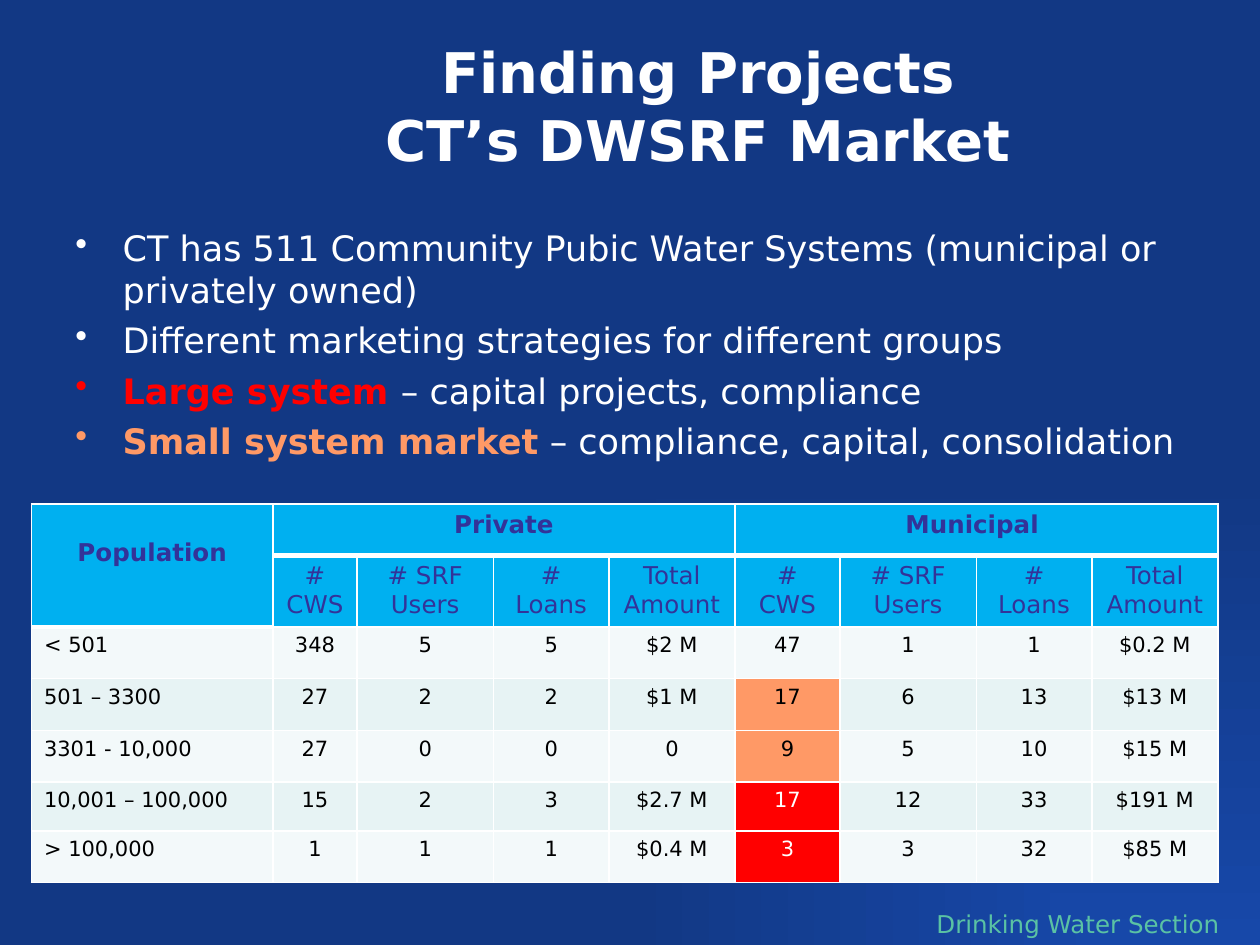
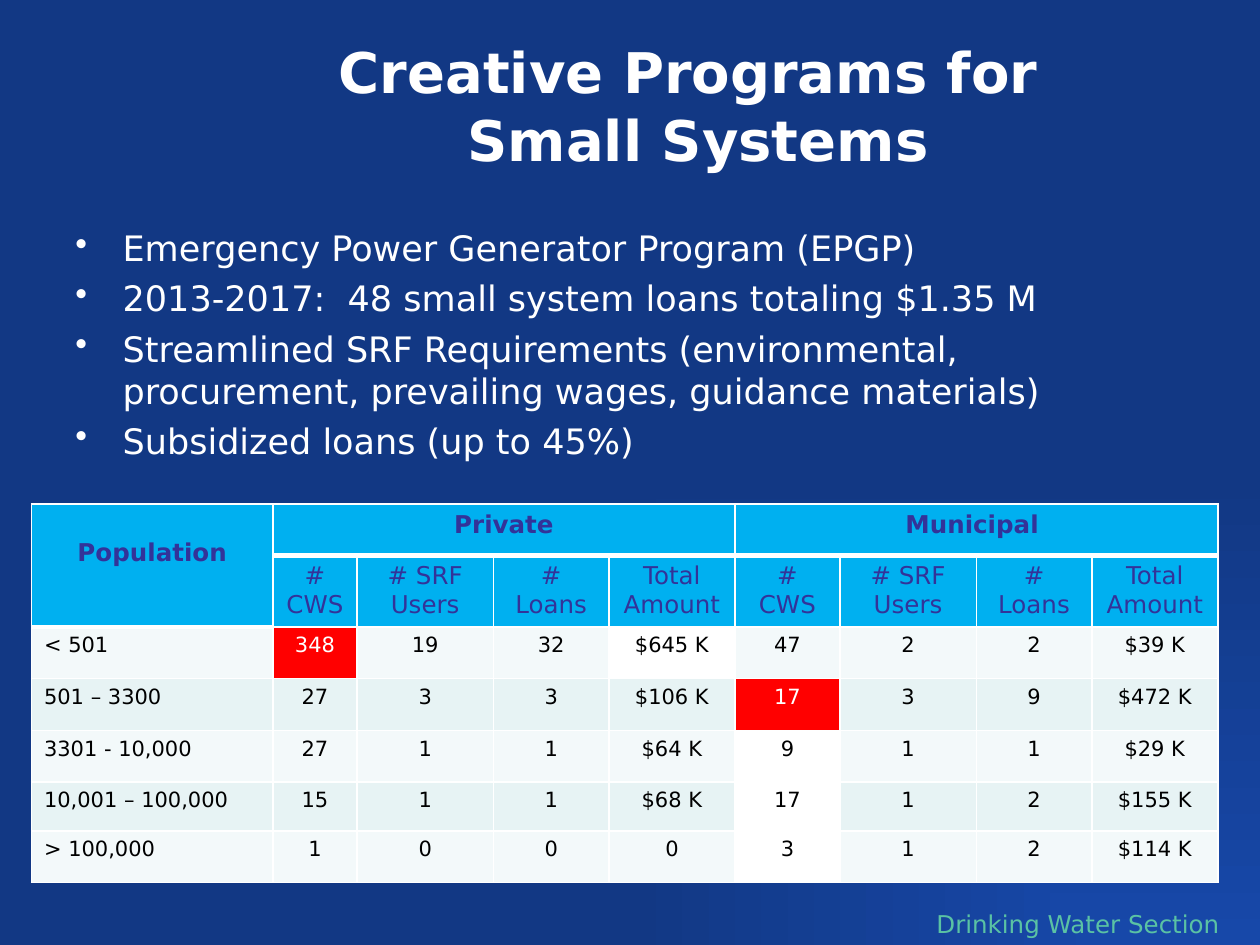
from pptx import Presentation
from pptx.dml.color import RGBColor
from pptx.enum import text
from pptx.oxml import ns
from pptx.util import Pt
from lxml import etree

FONT = "DejaVu Sans"
WHITE = RGBColor(0xFF, 0xFF, 0xFF)
BLACK = RGBColor(0x00, 0x00, 0x00)
RED = RGBColor(0xFF, 0x00, 0x00)
ORANGE = RGBColor(0xFF, 0x99, 0x66)
GREEN = RGBColor(0x5A, 0xC2, 0xA4)
INDIGO = RGBColor(0x33, 0x33, 0x99)
HEADER_BLUE = RGBColor(0x00, 0xB0, 0xF0)
BACK_LIGHT = RGBColor(0x17, 0x48, 0xA9)
BACK_DARK = RGBColor(0x12, 0x38, 0x84)
BANDS = (RGBColor(0xF3, 0xF9, 0xFA), RGBColor(0xE7, 0xF3, 0xF4))

# Boxes: left, top, width, height in points
PAGE_SIZE = (720, 540)
TITLE_BOX = (90, 18, 618, 84)
BODY_BOX = (36, 126, 648, 356)
TABLE_BOX = (18, 288, 678, 205)
FOOTER_BOX = (528, 516, 204, 24)

TITLE_STYLE = {"size": Pt(32), "bold": True, "color": WHITE}
BODY_STYLE = {"size": Pt(20), "bold": False, "color": WHITE}
FOOTER_STYLE = {"size": Pt(14), "bold": False, "color": GREEN}
GROUP_STYLE = {"size": Pt(14), "bold": True, "color": INDIGO}
COLUMN_STYLE = {"size": Pt(14), "bold": False, "color": INDIGO}
DATA_STYLE = {"size": Pt(12), "bold": False, "color": BLACK}

COLUMN_WIDTHS = (138, 48, 78, 66, 72, 60, 78, 66, 72)
ROW_HEIGHTS = (29.5, 29.5, 29.5, 29.5, 29.5, 28, 29.5)
GROUPS = {0: "Population", 1: "Private", 5: "Municipal "}
COLUMN_NAMES = ("#\nCWS", "# SRF Users", "#\nLoans", "Total\nAmount",
                "#\nCWS", "# SRF Users", "#\nLoans", "Total Amount")
POPULATIONS = ("< 501", "501 – 3300", "3301 - 10,000",
               "10,001 – 100,000", "> 100,000")

# Each bullet is a list of (words, style changes)
MARKET = {
    "title": "Finding Projects\vCT’s DWSRF Market",
    "bullets": [
        [("CT has 511 Community Pubic Water Systems "
          "(municipal or privately owned)", {})],
        [("Different marketing strategies for different groups", {})],
        [("Large system ", {"bold": True, "color": RED}),
         ("– capital projects, compliance", {})],
        [("Small system market", {"bold": True, "color": ORANGE}),
         (" – compliance, capital, consolidation", {})],
    ],
    "figures": [
        ("348", "5", "5", "$2 M", "47", "1", "1", "$0.2 M"),
        ("27", "2", "2", "$1 M", "17", "6", "13", "$13 M"),
        ("27", "0", "0", "0", "9", "5", "10", "$15 M"),
        ("15", "2", "3", "$2.7 M", "17", "12", "33", "$191 M"),
        ("1", "1", "1", "$0.4 M", "3", "3", "32", "$85 M"),
    ],
    "highlights": {(3, 5): ORANGE, (4, 5): ORANGE, (5, 5): RED, (6, 5): RED},
}
PROGRAMS = {
    "title": "Creative Programs for \vSmall Systems",
    "bullets": [
        [("Emergency Power Generator Program (EPGP)", {})],
        [("2013-2017:  48 small system loans totaling $1.35 M", {})],
        [("Streamlined SRF Requirements (environmental, procurement, "
          "prevailing wages, guidance materials)", {})],
        [("Subsidized loans (up to 45%)", {})],
    ],
    "figures": [
        ("348", "19", "32", "$645 K", "47", "2", "2", "$39 K"),
        ("27", "3", "3", "$106 K", "17", "3", "9", "$472 K"),
        ("27", "1", "1", "$64 K", "9", "1", "1", "$29 K"),
        ("15", "1", "1", "$68 K", "17", "1", "2", "$155 K"),
        ("1", "0", "0", "0", "3", "1", "2", "$114 K"),
    ],
    "highlights": {(2, 1): RED, (2, 4): WHITE, (3, 5): RED,
                   (4, 5): WHITE, (5, 5): WHITE, (6, 5): WHITE},
}


def add_xml(parent, tag, **attributes):
    return etree.SubElement(parent, ns.qn(tag), attributes)


def style_font(font, style):
    font.name = FONT
    for name, value in style.items():
        if name == "color":
            font.color.rgb = value
        else:
            setattr(font, name, value)


def add_text_box(page, box):
    frame = page.shapes.add_textbox(*map(Pt, box)).text_frame
    frame.word_wrap = True
    return frame


def add_line(page, box, words, style, align):
    frame = add_text_box(page, box)
    para = frame.paragraphs[0]
    para.text = words
    para.alignment = align
    for span in para.runs:
        style_font(span.font, style)
    return frame


def paint_background(page):
    """Glow from the bottom right corner."""
    fill = page.background.fill
    fill.gradient()
    for stop, color in zip(fill.gradient_stops, (BACK_LIGHT, BACK_DARK)):
        stop.color.rgb = color
    gradient = page.element.find(".//" + ns.qn("a:gradFill"))
    gradient.remove(gradient.find(ns.qn("a:lin")))
    glow = add_xml(gradient, "a:path", path="rect")
    add_xml(glow, "a:fillToRect", l="100000", t="100000")


def add_bullets(page, box, bullets):
    frame = add_text_box(page, box)
    for index, spans in enumerate(bullets):
        para = frame.add_paragraph() if index else frame.paragraphs[0]
        props = para._p.get_or_add_pPr()
        props.set("marL", str(Pt(27)))
        props.set("indent", str(-Pt(27)))
        bullet_color = add_xml(props, "a:buClr")
        first_color = spans[0][1].get("color", WHITE)
        add_xml(bullet_color, "a:srgbClr", val=str(first_color))
        add_xml(props, "a:buChar", char="•")
        if index:
            para.space_before = Pt(4.7)
        for words, changes in spans:
            span = para.add_run()
            span.text = words
            style_font(span.font, BODY_STYLE | changes)


def add_borders(cell, bottom):
    props = cell._tc.get_or_add_tcPr()
    for side, width in zip("LRTB", (1, 1, 1, bottom)):
        line = add_xml(props, "a:ln" + side, w=str(Pt(width)))
        add_xml(add_xml(line, "a:solidFill"), "a:srgbClr", val=str(WHITE))


def fill_cell(cell, words, style, fill, align, bottom=1):
    add_borders(cell, bottom)
    cell.fill.solid()
    cell.fill.fore_color.rgb = fill
    cell.text = words
    for para in cell.text_frame.paragraphs:
        para.alignment = align
        style_font(para.font, style)
        for span in para.runs:
            style_font(span.font, style)


def add_system_table(page, box, figures, highlights):
    grid = page.shapes.add_table(
        len(ROW_HEIGHTS), len(COLUMN_WIDTHS), *map(Pt, box)).table
    for column, width in zip(grid.columns, COLUMN_WIDTHS):
        column.width = Pt(width)
    for row, height in zip(grid.rows, ROW_HEIGHTS):
        row.height = Pt(height)

    center = text.PP_ALIGN.CENTER
    for col in range(len(COLUMN_WIDTHS)):
        fill_cell(grid.cell(0, col), GROUPS.get(col, ""), GROUP_STYLE,
                  HEADER_BLUE, center, bottom=3)
    fill_cell(grid.cell(1, 0), "", GROUP_STYLE, HEADER_BLUE, center, bottom=3)
    for col, name in enumerate(COLUMN_NAMES, 1):
        fill_cell(grid.cell(1, col), name, COLUMN_STYLE, HEADER_BLUE, center)
    grid.cell(0, 0).merge(grid.cell(1, 0))
    grid.cell(0, 0).margin_top = Pt(20)
    for first in (1, 5):
        grid.cell(0, first).merge(grid.cell(0, first + 3))

    for row, (population, values) in enumerate(zip(POPULATIONS, figures), 2):
        for col, words in enumerate((population, *values)):
            fill = highlights.get((row, col), BANDS[row % 2])
            color = WHITE if fill == RED else BLACK
            align = center if col else text.PP_ALIGN.LEFT
            fill_cell(grid.cell(row, col), words,
                      DATA_STYLE | {"color": color}, fill, align)


def add_page(deck, content):
    page = deck.slides.add_slide(deck.slide_layouts[6])
    paint_background(page)
    add_line(page, FOOTER_BOX, "Drinking Water Section", FOOTER_STYLE,
             text.PP_ALIGN.LEFT)
    title = add_line(page, TITLE_BOX, content["title"], TITLE_STYLE,
                     text.PP_ALIGN.CENTER)
    title.vertical_anchor = text.MSO_ANCHOR.MIDDLE
    add_bullets(page, BODY_BOX, content["bullets"])
    add_system_table(page, TABLE_BOX, content["figures"],
                     content["highlights"])


def main():
    deck = Presentation()
    deck.slide_width, deck.slide_height = map(Pt, PAGE_SIZE)
    for content in (MARKET, PROGRAMS):
        add_page(deck, content)
    deck.save("out.pptx")


if __name__ == "__main__":
    main()
